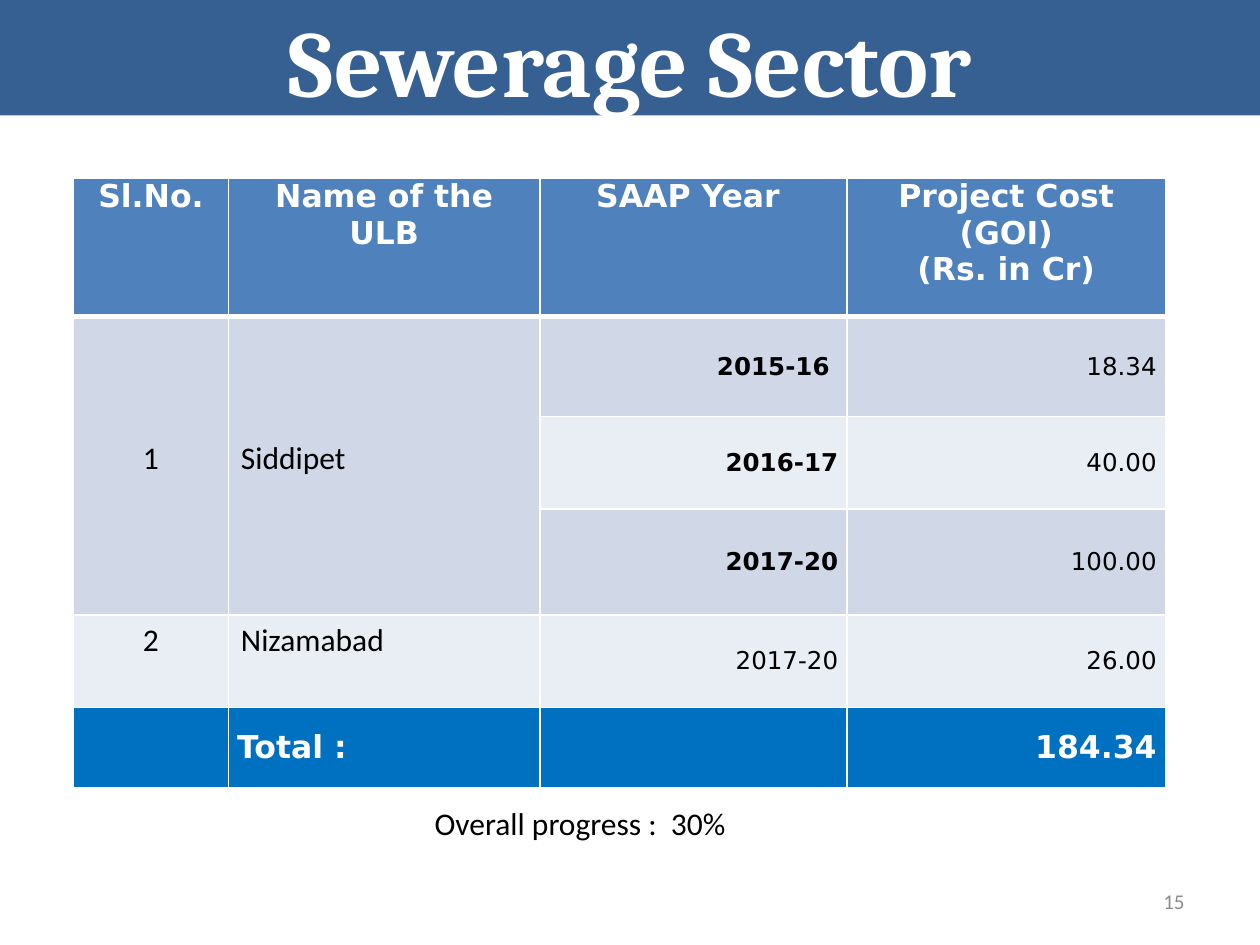
from dataclasses import dataclass

import pptx
import pptx.dml.color
import pptx.enum.text
import pptx.oxml
import pptx.oxml.ns
import pptx.util

Pt = pptx.util.Pt
ALIGN = pptx.enum.text.PP_ALIGN
ANCHOR = pptx.enum.text.MSO_ANCHOR

COLORS = {
    "banner": "376092", "header": "4F81BD", "dark_band": "D0D8E8",
    "light_band": "E9EDF4", "total": "0070C0", "white": "FFFFFF",
    "black": "000000", "number": "8C8C8C",
}


@dataclass
class Style:
    size: float = 18
    font: str = "DejaVu Sans"
    bold: bool = False
    color: str = "black"
    align: ALIGN = ALIGN.LEFT
    anchor: ANCHOR = ANCHOR.MIDDLE
    margins: tuple = (5, 0, 5, 0)  # left, top, right, bottom


@dataclass
class Entry:
    text: str
    style: Style


def rgb(name: str) -> pptx.dml.color.RGBColor:
    return pptx.dml.color.RGBColor.from_string(COLORS[name])


def write(frame, text: str, style: Style) -> None:
    frame.text = text
    for paragraph in frame.paragraphs:
        paragraph.alignment = style.align
        paragraph.font.size = Pt(style.size)
        paragraph.font.name = style.font
        paragraph.font.bold = style.bold
        paragraph.font.color.rgb = rgb(style.color)


def set_borders(cell, top: float, bottom: float) -> None:
    properties = cell._tc.get_or_add_tcPr()
    for side, width in zip("LRTB", (1, 1, top, bottom)):
        properties.append(pptx.oxml.parse_xml(
            f'<a:ln{side} {pptx.oxml.ns.nsdecls("a")} w="{Pt(width)}"><a:solidFill>'
            f'<a:srgbClr val="{COLORS["white"]}"/></a:solidFill></a:ln{side}>'))


def fill_cell(cell, entry: Entry) -> None:
    style = entry.style
    cell.vertical_anchor = style.anchor
    (cell.margin_left, cell.margin_top,
     cell.margin_right, cell.margin_bottom) = map(Pt, style.margins)
    write(cell.text_frame, entry.text, style)


def add_label(slide, box: tuple, text: str, style: Style, wrap: bool) -> None:
    frame = slide.shapes.add_textbox(*map(Pt, box)).text_frame
    frame.word_wrap = wrap
    frame.vertical_anchor = style.anchor
    write(frame, text, style)


HEADER = Style(bold=True, color="white", align=ALIGN.CENTER, anchor=ANCHOR.TOP)
YEAR = Style(14, bold=True, align=ALIGN.RIGHT)
AMOUNT = Style(14, align=ALIGN.RIGHT)
TOTAL = Style(bold=True, color="white")
TOTAL_AMOUNT = Style(bold=True, color="white", align=ALIGN.RIGHT)
INSET = (7.2, 3.6, 7.2, 3.6)
RAISED = (7.2, 3.6, 7.2, 12)  # lifts the text of the merged cells a little
SERIAL = Style(font="Calibri", align=ALIGN.CENTER, anchor=ANCHOR.TOP, margins=INSET)
TOWN = Style(font="Calibri", anchor=ANCHOR.TOP, margins=INSET)
MERGED_SERIAL = Style(font="Calibri", align=ALIGN.CENTER, margins=RAISED)
MERGED_TOWN = Style(font="Calibri", margins=RAISED)

COLUMN_WIDTHS = (88.5, 178, 175.5, 182)
ROW_HEIGHTS = (79, 57, 53, 60.5, 53, 45.5)
ROW_FILLS = ("header", "dark_band", "light_band", "dark_band", "light_band", "total")
ROWS = (
    [Entry(text, HEADER) for text in
     ("Sl.No.", "Name of the ULB", "SAAP Year ", "Project Cost (GOI)\n(Rs. in Cr)")],
    [Entry("1", MERGED_SERIAL), Entry("Siddipet", MERGED_TOWN),
     Entry("2015-16 ", YEAR), Entry("18.34", AMOUNT)],
    [None, None, Entry("2016-17", YEAR), Entry("40.00", AMOUNT)],
    [None, None, Entry("2017-20", YEAR), Entry("100.00", AMOUNT)],
    [Entry("2", SERIAL), Entry("Nizamabad", TOWN),
     Entry("2017-20", AMOUNT), Entry("26.00", AMOUNT)],
    [None, Entry("Total :", TOTAL), None, Entry("184.34", TOTAL_AMOUNT)],
)


def add_cost_table(slide) -> None:
    table = slide.shapes.add_table(
        len(ROWS), len(COLUMN_WIDTHS), Pt(42), Pt(102),
        Pt(sum(COLUMN_WIDTHS)), Pt(sum(ROW_HEIGHTS))).table
    table.first_row = table.horz_banding = False
    for column, width in zip(table.columns, COLUMN_WIDTHS):
        column.width = Pt(width)
    for r, (entries, height, band) in enumerate(zip(ROWS, ROW_HEIGHTS, ROW_FILLS)):
        table.rows[r].height = Pt(height)
        for c, entry in enumerate(entries):
            cell = table.cell(r, c)
            set_borders(cell, top=3 if r == 1 else 1, bottom=3 if r == 0 else 1)
            cell.fill.solid()
            cell.fill.fore_color.rgb = rgb(band)
            if entry:
                fill_cell(cell, entry)
    # Siddipet spans its three SAAP years
    for c in (0, 1):
        table.cell(1, c).merge(table.cell(3, c))


def main() -> None:
    deck = pptx.Presentation()
    deck.slide_width, deck.slide_height = Pt(720), Pt(540)
    slide = deck.slides.add_slide(deck.slide_layouts[5])

    # Title banner
    banner = slide.shapes.title
    banner.left, banner.top, banner.width, banner.height = map(Pt, (0, -2, 720, 68))
    banner.fill.solid()
    banner.fill.fore_color.rgb = rgb("banner")
    banner.text_frame.auto_size = pptx.enum.text.MSO_AUTO_SIZE.NONE
    banner.text_frame.vertical_anchor = ANCHOR.TOP
    write(banner.text_frame, "Sewerage Sector",
          Style(54, "Cambria", True, "white", ALIGN.CENTER))

    # Project costs
    add_cost_table(slide)

    # Progress line and page number
    add_label(slide, (240, 456, 187, 29), "Overall progress :  30% ",
              Style(font="Calibri", align=ALIGN.CENTER, anchor=ANCHOR.TOP), wrap=False)
    add_label(slide, (516, 500.5, 168, 28.5), "15",
              Style(12, "Calibri", color="number", align=ALIGN.RIGHT), wrap=True)

    deck.save("out.pptx")


if __name__ == "__main__":
    main()
